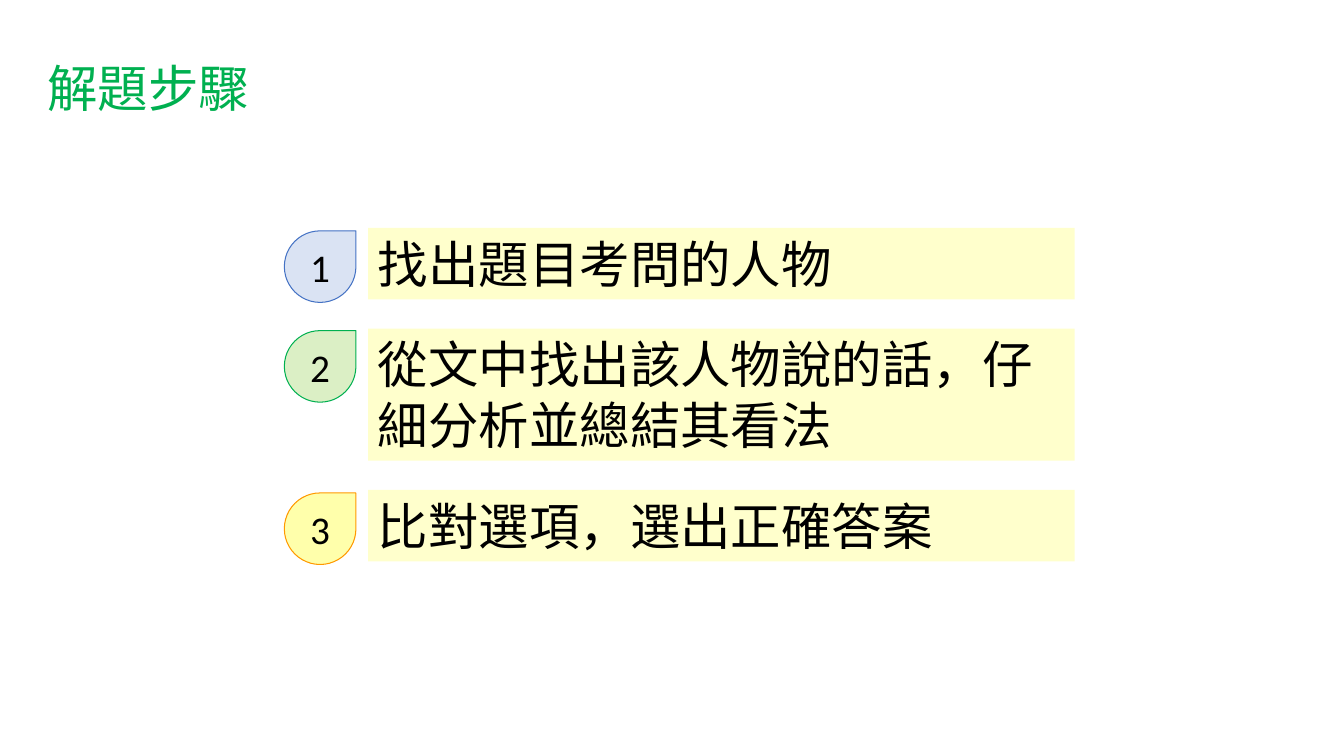
from lxml import etree
from pptx import Presentation
from pptx import util as u
from pptx.dml import color
from pptx.enum import shapes, text
from pptx.oxml import ns

HUES = {
    "ink": "000000", "title": "00B050", "band": "FFFFCC",
    "blue": "8FAADC", "navy": "4472C4",
    "lime": "92D050", "green": "00B050",
    "sun": "FFFF00", "orange": "FF9900",
}
# Text, top, height, badge offset, badge fill, badge line
STEPS = [
    ("找出題目考問的人物", 2.26, 0.71, 0.03, "blue", "navy"),
    ("從文中找出該人物說的話，仔細分析並總結其看法", 3.26, 1.31, 0.02, "lime", "green"),
    ("比對選項，選出正確答案", 4.86, 0.71, 0.03, "sun", "orange"),
]
LEFT, WIDTH, BADGE, GAP = 2.82, 7.84, 0.71, 0.12


def rgb(key):
    return color.RGBColor.from_string(HUES[key])


def write(shape, words, size, hue="ink", face="Calibri", east="Calibri",
          align=text.PP_ALIGN.LEFT, **frame):
    box = shape.text_frame
    for name, value in frame.items():
        setattr(box, name, value)
    para = box.paragraphs[0]
    para.alignment = align
    run = para.add_run()
    run.text = words
    for name, value in {"name": face, "size": u.Pt(size)}.items():
        setattr(run.font, name, value)
    run.font.color.rgb = rgb(hue)
    # East Asian typeface
    props = run.font._element
    etree.SubElement(props, ns.qn("a:ea"), typeface=east)


def block(slide, kind, box, fill):
    shape = slide.shapes.add_shape(kind, *map(u.Inches, box))
    shape.shadow.inherit = False
    shape.fill.solid()
    shape.fill.fore_color.rgb = rgb(fill)
    shape.line.fill.background()
    return shape


def title(slide, box):
    shape = slide.shapes.add_textbox(*map(u.Inches, box))
    write(shape, "解題步驟", 36, "title", "Noto Sans CJK SC", word_wrap=False)


def step(slide, box, number, words, drop, fill, line):
    left, top, width, height = box
    # Text band
    inset = BADGE + GAP
    band = block(slide, shapes.MSO_SHAPE.RECTANGLE,
                 (left + inset, top, width - inset, height), "band")
    write(band, words, 36, word_wrap=True, vertical_anchor=text.MSO_ANCHOR.TOP)
    # Numbered badge
    badge = block(slide, shapes.MSO_SHAPE.TEAR,
                  (left, top + drop, BADGE, BADGE), fill)
    badge.line.color.rgb = rgb(line)
    badge.line.width = u.Pt(0.75)
    tint = badge.fill._xPr.find(".//" + ns.qn("a:srgbClr"))
    etree.SubElement(tint, ns.qn("a:alpha"), val="33000")
    write(badge, str(number), 28, align=text.PP_ALIGN.CENTER,
          vertical_anchor=text.MSO_ANCHOR.MIDDLE)


def main():
    deck = Presentation()
    deck.slide_width, deck.slide_height = u.Inches(13.33), u.Inches(7.5)
    slide = deck.slides.add_slide(deck.slide_layouts[6])
    title(slide, (0.37, 0.52, 2.22, 0.71))
    for number, (words, top, height, *look) in enumerate(STEPS, 1):
        step(slide, (LEFT, top, WIDTH, height), number, words, *look)
    deck.save("out.pptx")


if __name__ == "__main__":
    main()
